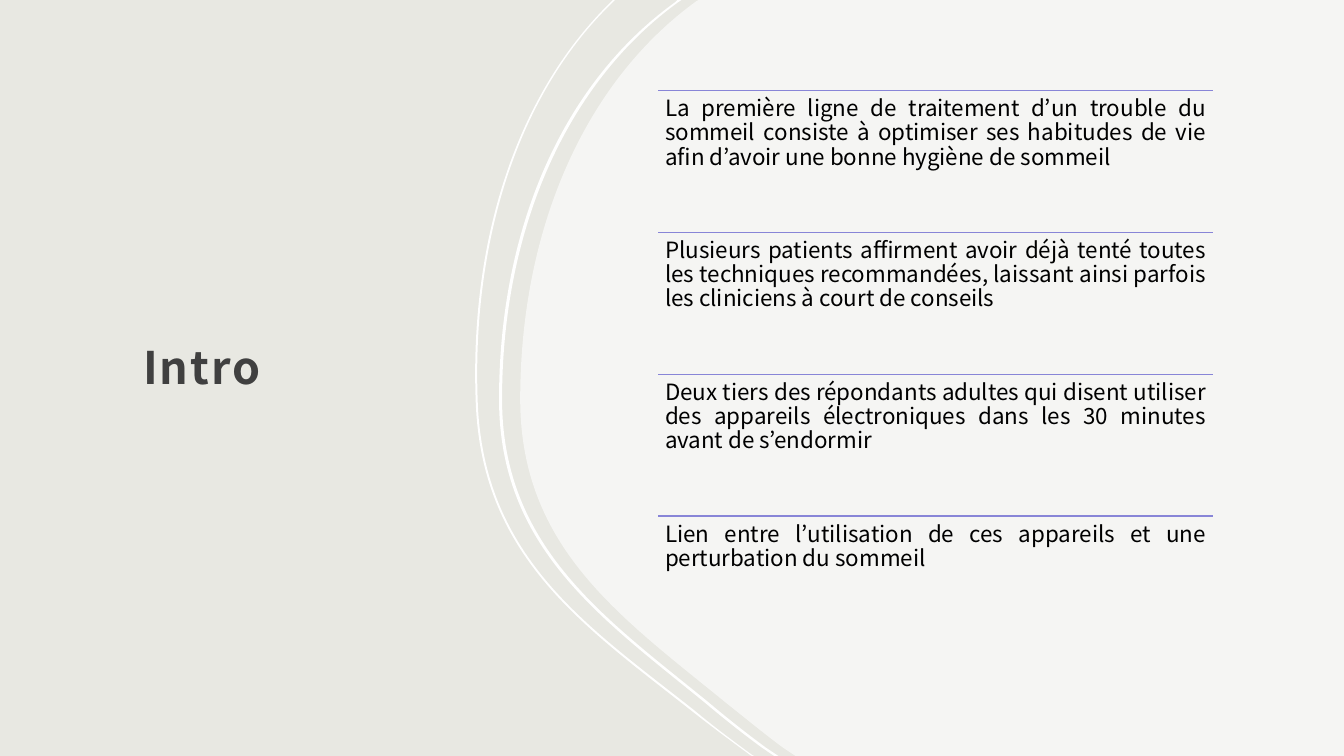
import pptx
import pptx.util
import pptx.dml.color
import pptx.enum.text
import pptx.enum.shapes
from lxml import etree
from pptx.dml.color import RGBColor
from pptx.oxml.ns import qn
from pptx.util import Inches, Pt

TITLE = "Intro"
POINTS = [
    "La première ligne de traitement d’un trouble du sommeil consiste à optimiser "
    "ses habitudes de vie afin d’avoir une bonne hygiène de sommeil ",
    "Plusieurs patients affirment avoir déjà tenté toutes les techniques "
    "recommandées, laissant ainsi parfois les cliniciens à court de conseils ",
    "Deux tiers des répondants adultes qui disent utiliser des appareils "
    "électroniques dans les 30 minutes avant de s’endormir ",
    "Lien entre l’utilisation de ces appareils et une perturbation du sommeil",
]

FONT = "Noto Sans CJK JP"
BACKGROUND = RGBColor(0xE8, 0xE8, 0xE2)
WHITE = RGBColor(0xFF, 0xFF, 0xFF)
BLACK = RGBColor(0, 0, 0)
TITLE_GREY = RGBColor(0x40, 0x40, 0x40)
RULE_VIOLET = RGBColor(0x88, 0x85, 0xD7)

# Outlines in inches: a pair is a straight step, six numbers are a Bézier step.
PANEL = [
    (13.33, 0), (6.93, 0), (6.91, 0.01),
    (5.79, 0.82, 5.16, 2.29, 5.16, 3.96),
    (5.16, 5.44, 6.17, 6.13, 7.21, 6.98),
    (7.4, 7.13, 7.58, 7.28, 7.77, 7.42),
    (7.89, 7.5), (13.33, 7.5),
]
OUTER_ARC = [
    (6.1, 0), (6.08, 0), (6.05, 0.03),
    (5.12, 0.94, 4.65, 2.4, 4.72, 4.02),
    (4.79, 5.55, 5.82, 6.23, 6.87, 7.06),
    (7.06, 7.21, 7.25, 7.35, 7.44, 7.49),
    (7.46, 7.5), (7.48, 7.5), (7.46, 7.49),
    (7.27, 7.35, 7.08, 7.21, 6.89, 7.05),
    (5.84, 6.22, 4.81, 5.55, 4.74, 4.02),
    (4.67, 2.4, 5.14, 0.93, 6.07, 0.03),
]
INNER_ARC = [
    (6.76, 0), (6.72, 0), (6.7, 0.02),
    (5.57, 0.83, 4.95, 2.29, 4.95, 3.96),
    (4.95, 5.43, 5.96, 6.13, 6.99, 6.97),
    (7.18, 7.13, 7.37, 7.28, 7.56, 7.42),
    (7.68, 7.5), (7.72, 7.5), (7.6, 7.42),
    (7.41, 7.28, 7.22, 7.13, 7.03, 6.97),
    (6, 6.13, 4.98, 5.43, 4.98, 3.96),
    (4.98, 2.29, 5.61, 0.83, 6.73, 0.02),
]
OUTLINES = [(PANEL, 60), (OUTER_ARC, 100), (INNER_ARC, 100)]

TITLE_PLACE = (1.3, 1.21, 3.3, 4.68)
TITLE_INSETS = [Inches(0.12)] * 3 + [Inches(0.1)]
LIST_LEFT, LIST_TOP, LIST_WIDTH = 6.53, 0.9, 5.5
LAST_TOP, ROW_HEIGHT = 5.12, 1.41
LIST_INSETS = [Pt(4.8)] * 4


def add_outline(page, outline, opacity):
    """Add a white freeform, turning its six-number steps into true curves."""
    anchors = [(Inches(step[-2]), Inches(step[-1])) for step in outline]
    builder = page.shapes.build_freeform(*anchors[0], scale=1.0)
    builder.add_line_segments(anchors[1:], close=True)
    shape = builder.convert_to_shape()
    lines = list(shape._element.iter(qn("a:lnTo")))
    for line, step in zip(lines, outline[1:]):
        if len(step) == 6:
            curve = etree.Element(qn("a:cubicBezTo"))
            for x, y in zip(step[::2], step[1::2]):
                etree.SubElement(curve, qn("a:pt"),
                                 x=str(Inches(x) - shape.left),
                                 y=str(Inches(y) - shape.top))
            line.getparent().replace(line, curve)
    shape.shadow.inherit = False
    shape.line.fill.background()
    shape.fill.solid()
    shape.fill.fore_color.rgb = WHITE
    if opacity < 100:
        color = shape._element.spPr.find(qn("a:solidFill"))[0]
        etree.SubElement(color, qn("a:alpha"), val=str(opacity * 1000))


def add_text(page, text, place, insets, size, color, line_spacing):
    box = page.shapes.add_textbox(*map(Inches, place))
    frame = box.text_frame
    frame.word_wrap = True
    (frame.margin_left, frame.margin_top,
     frame.margin_right, frame.margin_bottom) = insets
    frame.text = text
    para = frame.paragraphs[0]
    para.line_spacing = line_spacing
    span = para.runs[0]
    span.font.name = FONT
    span.font.size = Pt(size)
    span.font.color.rgb = color
    return frame, para, span


def add_rule(page, top):
    rule = page.shapes.add_connector(
        pptx.enum.shapes.MSO_CONNECTOR.STRAIGHT, Inches(LIST_LEFT), Inches(top),
        Inches(LIST_LEFT + LIST_WIDTH), Inches(top))
    rule.line.color.rgb = RULE_VIOLET
    rule.line.width = Pt(1)
    etree.SubElement(rule._element.spPr, qn("a:effectLst"))


def main():
    deck = pptx.Presentation()
    deck.slide_width, deck.slide_height = Inches(13.33), Inches(7.5)
    page = deck.slides.add_slide(deck.slide_layouts[6])
    page.background.fill.solid()
    page.background.fill.fore_color.rgb = BACKGROUND

    for outline, opacity in OUTLINES:
        add_outline(page, outline, opacity)

    frame, para, span = add_text(page, TITLE, TITLE_PLACE, TITLE_INSETS,
                                 32, TITLE_GREY, 1.3)
    frame.vertical_anchor = pptx.enum.text.MSO_ANCHOR.MIDDLE
    span.font.bold = True
    span.font._element.set("spc", "150")

    pitch = (LAST_TOP - LIST_TOP) / (len(POINTS) - 1)
    for row, point in enumerate(POINTS):
        top = LIST_TOP + row * pitch
        add_rule(page, top)
        frame, para, span = add_text(
            page, point, (LIST_LEFT, top, LIST_WIDTH, ROW_HEIGHT),
            LIST_INSETS, 16, BLACK, 0.9)
        para.alignment = pptx.enum.text.PP_ALIGN.JUSTIFY

    deck.save("out.pptx")


if __name__ == "__main__":
    main()
